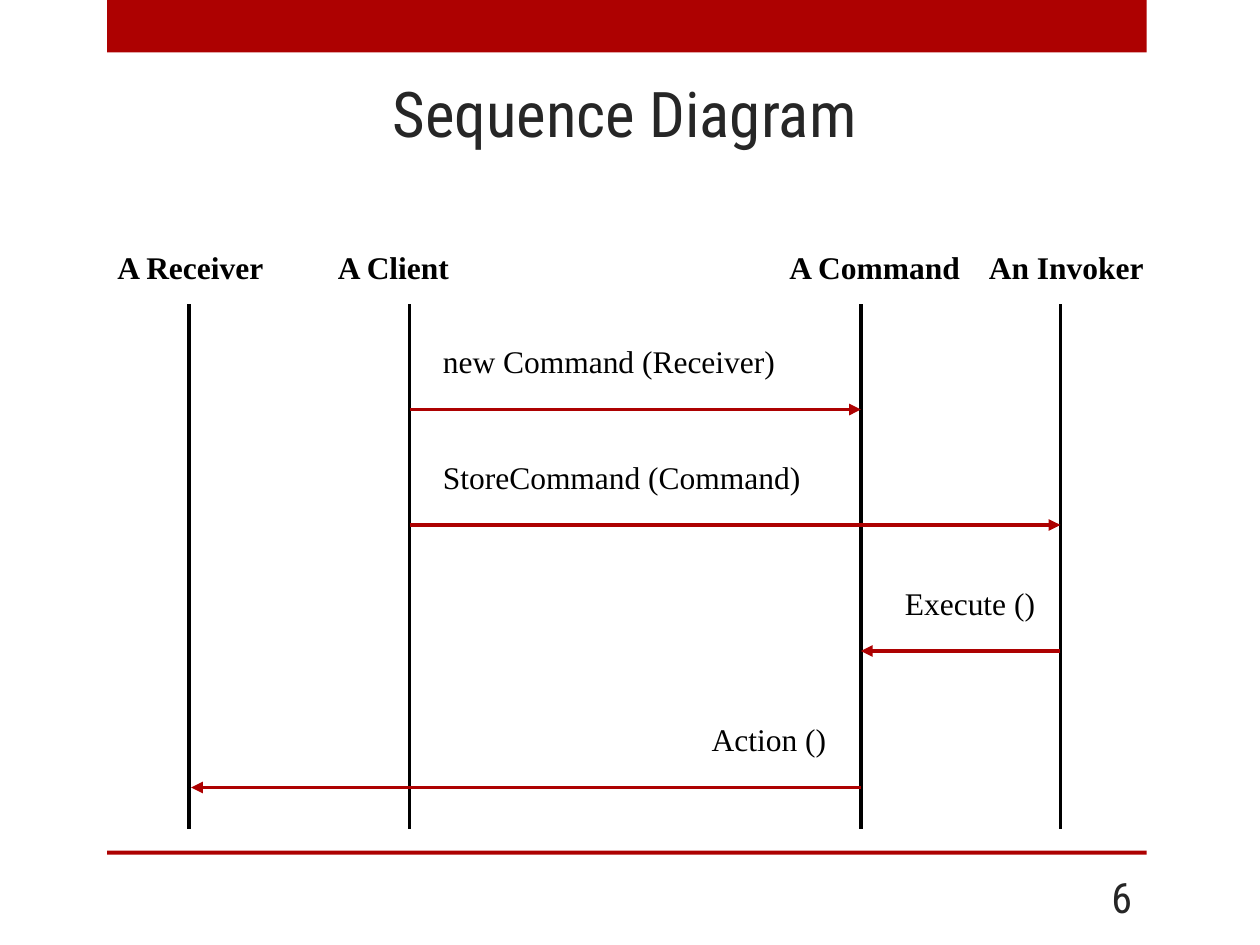
from typing import NamedTuple

from lxml import etree
from pptx import Presentation
from pptx.dml.color import RGBColor
from pptx.enum.shapes import MSO_CONNECTOR, MSO_SHAPE
from pptx.enum.text import MSO_ANCHOR, MSO_AUTO_SIZE, PP_ALIGN
from pptx.oxml.ns import qn
from pptx.util import Emu, Pt

RECTANGLE = MSO_SHAPE.RECTANGLE
STRAIGHT = MSO_CONNECTOR.STRAIGHT
MIDDLE = MSO_ANCHOR.MIDDLE
CENTER, RIGHT, LEFT = PP_ALIGN.CENTER, PP_ALIGN.RIGHT, PP_ALIGN.LEFT
FIT_SHAPE, NO_FIT = MSO_AUTO_SIZE.SHAPE_TO_FIT_TEXT, MSO_AUTO_SIZE.NONE

EMU_PER_PX = 7620  # 120 px to the inch
RED, BLACK, DARK = "AD0101", "000000", "262626"
HEADING_FONT, DIAGRAM_FONT = "Roboto Condensed", "Times New Roman"

LIFELINE_TOP, LIFELINE_BOTTOM = 290, 790
NAME_TOP, NAME_OFFSET = 230, 80
LABEL_RISE, LABEL_HEIGHT = 70, 48


class Box(NamedTuple):
    left: int
    top: int
    width: int
    height: int


class Lifeline(NamedTuple):
    name: str
    x: int
    name_width: int


class Message(NamedTuple):
    label: str
    start_x: int
    end_x: int
    y: int
    label_left: int
    label_width: int


RECEIVER = Lifeline("A Receiver", 180, 164)
CLIENT = Lifeline("A Client", 390, 131)
COMMAND = Lifeline("A Command", 820, 188)
INVOKER = Lifeline("An Invoker", 1010, 173)
LIFELINES = (RECEIVER, CLIENT, COMMAND, INVOKER)

MESSAGES = (
    Message("new Command (Receiver)", CLIENT.x, COMMAND.x, 390, 410, 344),
    Message("StoreCommand (Command)", CLIENT.x, INVOKER.x, 500, 410, 368),
    Message("Execute ()", INVOKER.x, COMMAND.x, 620, 850, 150),
    Message("Action ()", COMMAND.x, RECEIVER.x + 2, 750, 666, 134),
)


def px(length: int) -> Emu:
    return Emu(length * EMU_PER_PX)


def color(value: str) -> RGBColor:
    return RGBColor.from_string(value)


def write(text_frame, text: str, size: int, font_name: str, font_color: str,
          alignment=LEFT, bold: bool = False) -> None:
    text_frame.text = text
    paragraph = text_frame.paragraphs[0]
    paragraph.alignment = alignment
    font = paragraph.runs[0].font
    font.size = Pt(size)
    font.name = font_name
    font.bold = bold
    font.color.rgb = color(font_color)


def add_bar(slide, box: Box) -> None:
    shape = slide.shapes.add_shape(RECTANGLE, *map(px, box))
    shape.shadow.inherit = False
    shape.fill.solid()
    shape.fill.fore_color.rgb = color(RED)
    shape.line.fill.background()


def add_title(slide, text: str, box: Box) -> None:
    title = slide.shapes.title
    title.left, title.top, title.width, title.height = map(px, box)
    title.text_frame.vertical_anchor = MIDDLE
    title.text_frame.auto_size = NO_FIT
    write(title.text_frame, text, 36, HEADING_FONT, DARK, CENTER)


def add_page_number(slide, text: str, box: Box) -> None:
    text_frame = slide.shapes.add_textbox(*map(px, box)).text_frame
    text_frame.word_wrap = True
    text_frame.vertical_anchor = MIDDLE
    write(text_frame, text, 24, HEADING_FONT, DARK, RIGHT)


def add_label(slide, text: str, box: Box, bold: bool = False) -> None:
    text_frame = slide.shapes.add_textbox(*map(px, box)).text_frame
    text_frame.word_wrap = False
    text_frame.auto_size = FIT_SHAPE
    write(text_frame, text, 18, DIAGRAM_FONT, BLACK, bold=bold)


def add_line(slide, start: tuple[int, int], end: tuple[int, int],
             line_color: str, width: float, arrow: bool = False) -> None:
    connector = slide.shapes.add_connector(STRAIGHT, *map(px, start + end))
    connector.line.color.rgb = color(line_color)
    connector.line.width = Pt(width)
    if arrow:
        line = connector.line._get_or_add_ln()
        etree.SubElement(line, qn("a:tailEnd"), type="triangle")
    etree.SubElement(connector._element.spPr, qn("a:effectLst"))


def add_lifeline(slide, lifeline: Lifeline) -> None:
    add_line(slide, (lifeline.x, LIFELINE_TOP), (lifeline.x, LIFELINE_BOTTOM),
             BLACK, 2)
    add_label(slide, lifeline.name,
              Box(lifeline.x - NAME_OFFSET, NAME_TOP,
                  lifeline.name_width, LABEL_HEIGHT), bold=True)


def add_message(slide, message: Message) -> None:
    add_line(slide, (message.start_x, message.y), (message.end_x, message.y),
             RED, 2.25, arrow=True)
    add_label(slide, message.label,
              Box(message.label_left, message.y - LABEL_RISE,
                  message.label_width, LABEL_HEIGHT))


def main() -> None:
    presentation = Presentation()
    presentation.slide_width, presentation.slide_height = px(1200), px(900)
    slide = presentation.slides.add_slide(presentation.slide_layouts[5])

    add_bar(slide, Box(102, 0, 990, 50))
    add_bar(slide, Box(102, 810, 990, 4))
    add_title(slide, "Sequence Diagram", Box(100, 64, 990, 86))
    add_page_number(slide, "6", Box(990, 830, 100, 48))
    for lifeline in LIFELINES:
        add_lifeline(slide, lifeline)
    for message in MESSAGES:
        add_message(slide, message)

    presentation.save("out.pptx")


if __name__ == "__main__":
    main()
